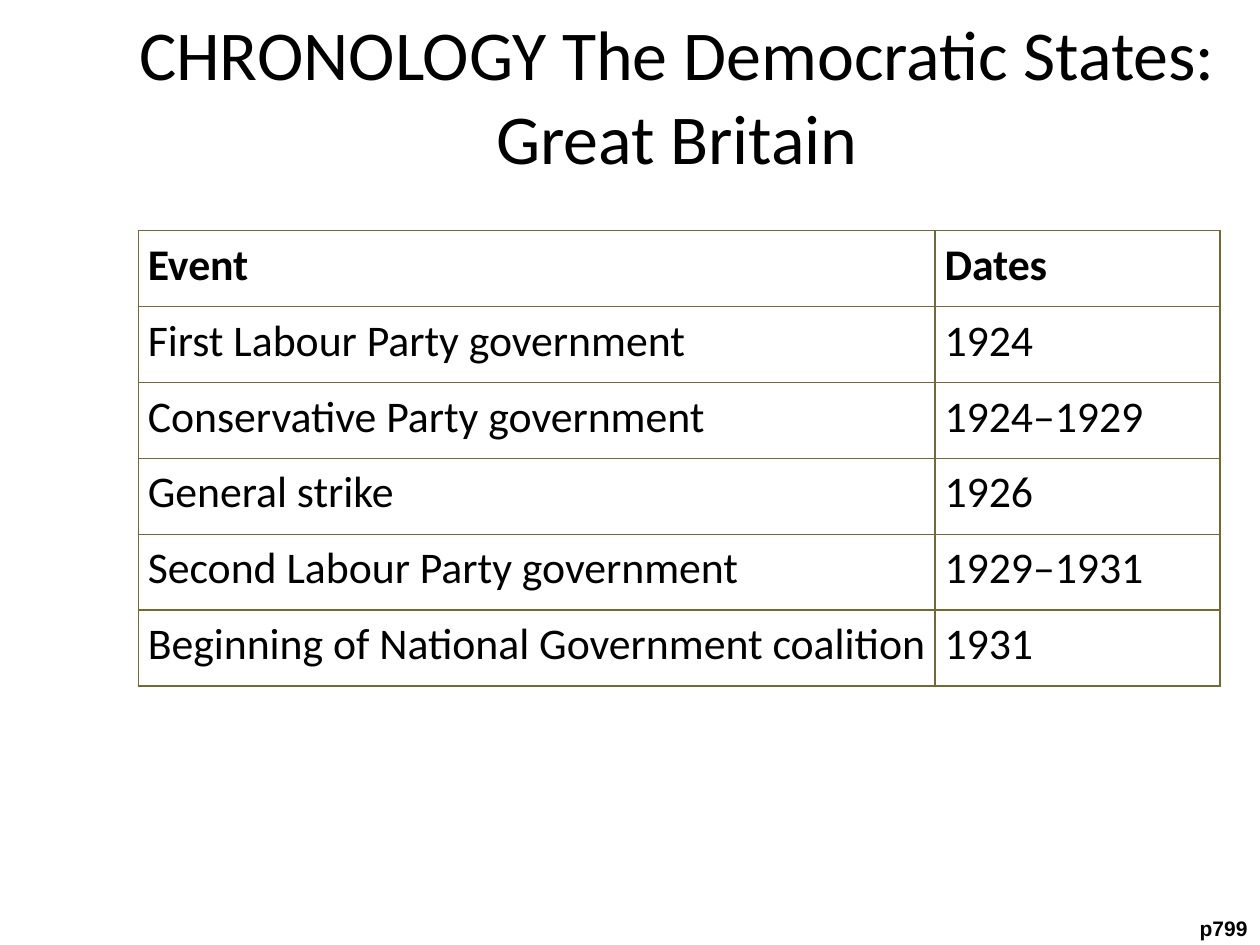
from lxml import etree
from pptx import Presentation
from pptx import util as u
from pptx.dml import color
from pptx.enum import text
from pptx.oxml import ns

# Content
TITLE = "CHRONOLOGY The Democratic States: Great Britain"
PAGE_LABEL = "p799"
EVENTS = [
    ("Event", "Dates"),
    ("First Labour Party government", "1924"),
    ("Conservative Party government", "1924–1929"),
    ("General strike", "1926"),
    ("Second Labour Party government", "1929–1931"),
    ("Beginning of National Government coalition", "1931"),
]

# Layout in centimetres
COLUMN_WIDTHS = (16.06, 5.74)
ROW_HEIGHT = 1.53
CELL_INSET = 0.19
BLACK, BORDER = "000000", "746833"


def rgb(value):
    return color.RGBColor.from_string(value)


def write(frame, words, size, font="Calibri", bold=False,
          align=text.PP_ALIGN.LEFT, spacing=1.0):
    para = frame.paragraphs[0]
    para.alignment = align
    para.line_spacing = spacing
    span = para.add_run()
    span.text = words
    span.font.name = font
    span.font.size = u.Pt(size)
    span.font.bold = bold
    span.font.color.rgb = rgb(BLACK)


def add_box(page, left, top, width, height, wrap, anchor):
    box = page.shapes.add_textbox(u.Cm(left), u.Cm(top), u.Cm(width), u.Cm(height))
    box.text_frame.word_wrap = wrap
    box.text_frame.vertical_anchor = anchor
    return box.text_frame


def set_borders(cell, value, points):
    properties = cell._tc.get_or_add_tcPr()
    for position, side in enumerate(("lnL", "lnR", "lnT", "lnB")):
        line = etree.Element(ns.qn(f"a:{side}"), w=str(u.Pt(points)))
        fill = etree.SubElement(line, ns.qn("a:solidFill"))
        etree.SubElement(fill, ns.qn("a:srgbClr"), val=value)
        properties.insert(position, line)


def add_events(page, left, top):
    grid = page.shapes.add_table(
        len(EVENTS), len(COLUMN_WIDTHS), u.Cm(left), u.Cm(top),
        u.Cm(sum(COLUMN_WIDTHS)), u.Cm(ROW_HEIGHT * len(EVENTS))).table
    grid.horz_banding = False
    for column, width in zip(grid.columns, COLUMN_WIDTHS):
        column.width = u.Cm(width)
    for r, event in enumerate(EVENTS):
        grid.rows[r].height = u.Cm(ROW_HEIGHT)
        for c, words in enumerate(event):
            cell = grid.cell(r, c)
            cell.margin_left = cell.margin_right = u.Cm(CELL_INSET)
            cell.margin_top = cell.margin_bottom = 0
            cell.fill.background()
            set_borders(cell, BORDER, 1)
            write(cell.text_frame, words, 25, bold=r == 0, spacing=1.15)


def main():
    deck = Presentation()
    deck.slide_width, deck.slide_height = u.Cm(25.4), u.Cm(19.05)
    page = deck.slides.add_slide(deck.slide_layouts[6])

    # Title
    title = add_box(page, 1.9, 1.27, 23.5, 1.27, True, text.MSO_ANCHOR.MIDDLE)
    write(title, TITLE, 40, align=text.PP_ALIGN.CENTER)

    # Page reference
    label = add_box(page, 23.8, 18.34, 1.6, 0.76, False, text.MSO_ANCHOR.TOP)
    write(label, PAGE_LABEL, 12, font="Arial", bold=True, align=text.PP_ALIGN.RIGHT)

    # Chronology
    add_events(page, 2.79, 4.65)
    deck.save("out.pptx")


if __name__ == "__main__":
    main()
